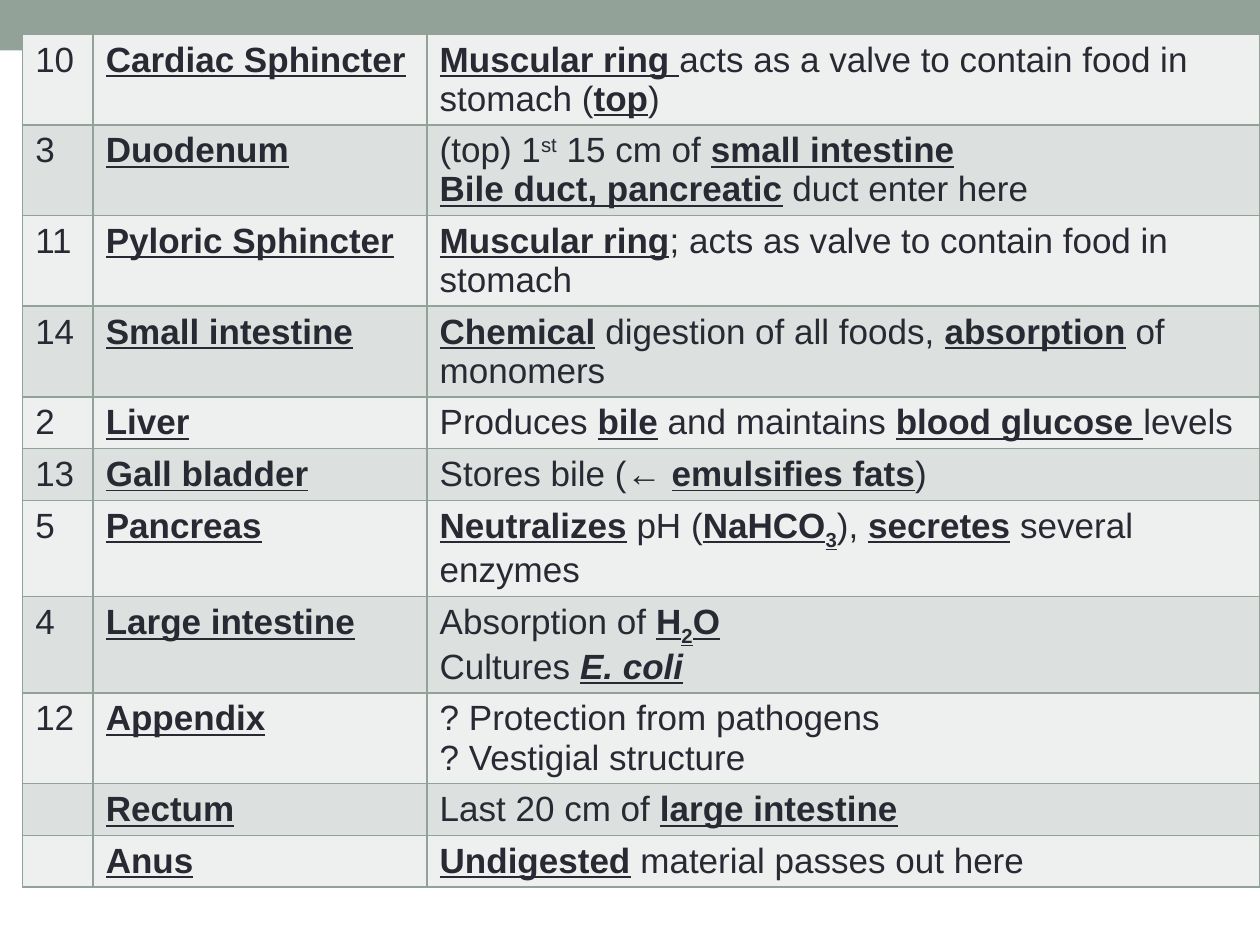
from lxml import etree
from pptx import Presentation
from pptx.dml.color import RGBColor
from pptx.enum.shapes import MSO_SHAPE
from pptx.oxml.ns import qn
from pptx.util import Inches, Pt

RECTANGLE = MSO_SHAPE.RECTANGLE
BLANK_LAYOUT = 6
COLORS = {"sage": "93A299", "ink": "292934", "light": "EEF0EF", "dark": "DCE0DE"}
FONT = "Arial"
COLUMN_WIDTHS = [0.56, 2.65, 6.61]
ROW_HEIGHT = 0.41
BORDER_SIDES = ["a:lnL", "a:lnR", "a:lnT", "a:lnB"]
BOLD, ITALIC, SUPER, SUB = "*~^_"
BASELINES = {SUPER: "30000", SUB: "-25000"}

ORGANS = [
    ("10", "Cardiac Sphincter",
     "*Muscular ring *acts as a valve to contain food in stomach (*top*)"),
    ("3", "Duodenum",
     "(top) 1^st^ 15 cm of *small intestine*\n*Bile duct, pancreatic* duct enter here"),
    ("11", "Pyloric Sphincter",
     "*Muscular ring*; acts as valve to contain food in stomach"),
    ("14", "Small intestine",
     "*Chemical* digestion of all foods, *absorption* of monomers"),
    ("2", "Liver", "Produces *bile* and maintains *blood glucose *levels"),
    ("13", "Gall bladder", "Stores bile (← *emulsifies fats*)"),
    ("5", "Pancreas",
     "*Neutralizes* pH (*NaHCO_3_*), *secretes* several enzymes"),
    ("4", "Large intestine", "Absorption of *H_2_O*\nCultures *~E. coli~*"),
    ("12", "Appendix", "? Protection from pathogens\n? Vestigial structure"),
    ("", "Rectum", "Last 20 cm of *large intestine*"),
    ("", "Anus", "*Undigested* material passes out here"),
]


def rgb(name):
    return RGBColor.from_string(COLORS[name])


def split_markup(line):
    styles, text = set(), ""
    for char in line:
        if char in (BOLD, ITALIC, SUPER, SUB):
            if text:
                yield text, frozenset(styles)
            styles ^= {char}
            text = ""
        else:
            text += char
    if text:
        yield text, frozenset(styles)


def add_run(paragraph, text, styles):
    run = paragraph.add_run()
    run.text = text
    font = run.font
    font.name = FONT
    font.size = Pt(20)
    font.color.rgb = rgb("ink")
    font.bold = font.underline = BOLD in styles
    font.italic = ITALIC in styles
    for style in styles & BASELINES.keys():
        font._element.set("baseline", BASELINES[style])


def set_borders(cell):
    properties = cell._tc.get_or_add_tcPr()
    for position, side in enumerate(BORDER_SIDES):
        line = etree.Element(qn(side), w=str(Pt(1)))
        fill = etree.SubElement(line, qn("a:solidFill"))
        etree.SubElement(fill, qn("a:srgbClr"), val=COLORS["sage"])
        properties.insert(position, line)


def fill_cell(cell, markup, shade):
    cell.fill.solid()
    cell.fill.fore_color.rgb = rgb(shade)
    set_borders(cell)
    for index, line in enumerate(markup.split("\n")):
        frame = cell.text_frame
        paragraph = frame.add_paragraph() if index else frame.paragraphs[0]
        for text, styles in split_markup(line):
            add_run(paragraph, text, styles)


def add_top_band(slide):
    band = slide.shapes.add_shape(RECTANGLE, 0, 0, Inches(10), Inches(0.4))
    band.shadow.inherit = False
    band.fill.solid()
    band.fill.fore_color.rgb = rgb("sage")
    band.line.fill.background()


def add_organ_table(slide):
    table = slide.shapes.add_table(
        len(ORGANS), len(COLUMN_WIDTHS), Inches(0.18), Inches(0.27),
        Inches(sum(COLUMN_WIDTHS)), Inches(ROW_HEIGHT * len(ORGANS))).table
    table.first_row = False
    table.horz_banding = False
    for column, width in zip(table.columns, COLUMN_WIDTHS):
        column.width = Inches(width)
    for index, (row, (number, organ, function)) in enumerate(zip(table.rows, ORGANS)):
        row.height = Inches(ROW_HEIGHT)
        shade = "dark" if index % 2 else "light"
        for cell, markup in zip(row.cells, (number, f"*{organ}*", function)):
            fill_cell(cell, markup, shade)


def main():
    presentation = Presentation()
    presentation.slide_width = Inches(10)
    presentation.slide_height = Inches(7.5)
    slide = presentation.slides.add_slide(presentation.slide_layouts[BLANK_LAYOUT])
    add_top_band(slide)
    add_organ_table(slide)
    presentation.save("out.pptx")


if __name__ == "__main__":
    main()
